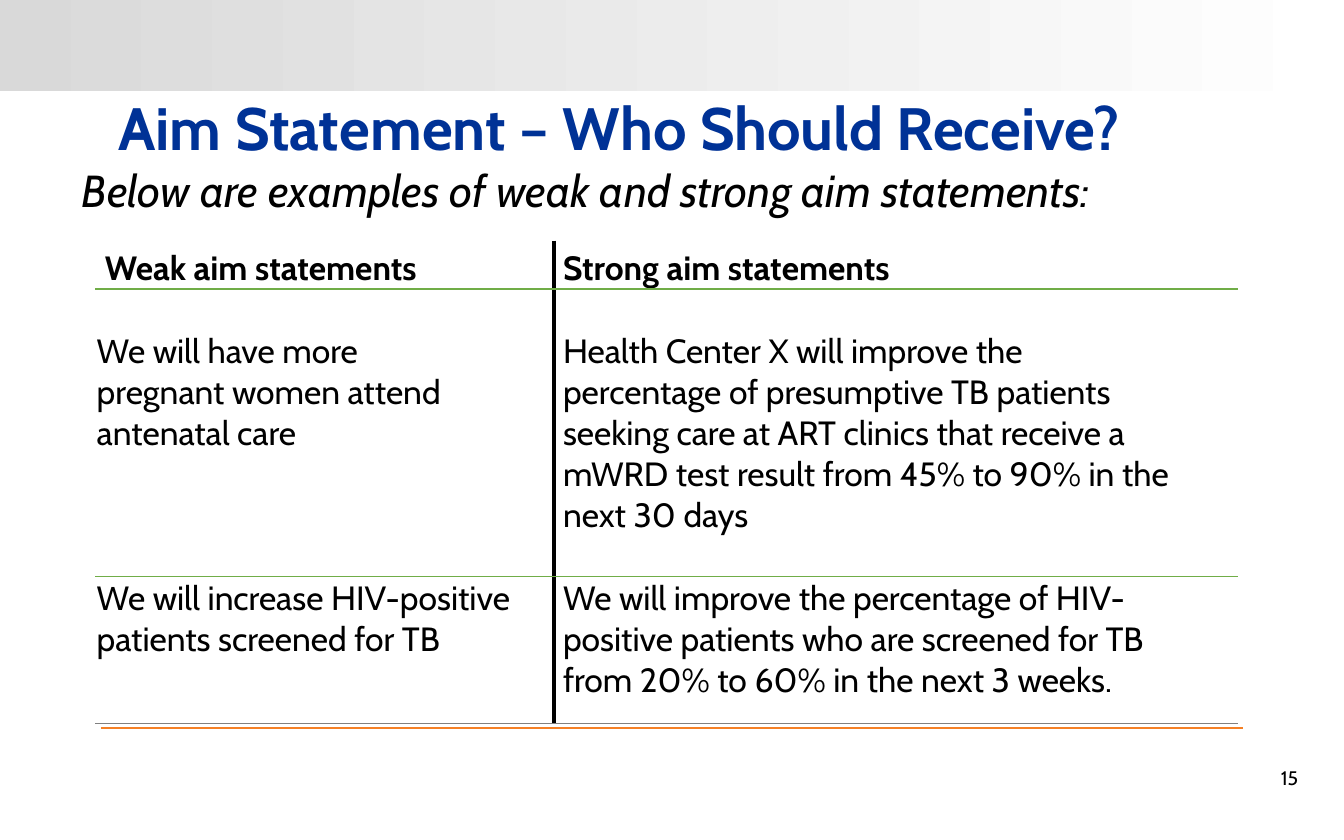
from pptx import Presentation
from pptx.dml.color import RGBColor
from pptx.enum.shapes import MSO_CONNECTOR, MSO_SHAPE
from pptx.enum.text import MSO_ANCHOR as Anchor, PP_ALIGN as Align
from pptx.oxml import parse_xml
from pptx.oxml.ns import nsdecls, qn
from pptx.util import Inches, Pt

BLACK = RGBColor(0x00, 0x00, 0x00)
WHITE = RGBColor(0xFF, 0xFF, 0xFF)
SILVER = RGBColor(0xD9, 0xD9, 0xD9)
GRAY = RGBColor(0x80, 0x80, 0x80)
BLUE = RGBColor(0x00, 0x32, 0x96)
ORANGE = RGBColor(0xF5, 0x80, 0x25)
GREEN = RGBColor(0x70, 0xAD, 0x47)

FONT = "Cabin"
NO_STYLE = "{2D5ABB26-0587-4C30-8999-92F81FD0307C}"
COLUMN_WIDTHS = (3.41, 5.09)
ROW_HEIGHTS = (0.36, 2.14, 1.09)
STATEMENTS = (
    (["Weak aim statements"], ["Strong aim statements"]),
    (
        ["We will have more pregnant women attend antenatal care"],
        [
            "Health Center X will improve the",
            "percentage of presumptive TB patients",
            "seeking care at ART clinics that receive a",
            "mWRD test result from 45% to 90% in the",
            "next 30 days",
        ],
    ),
    (
        ["We will increase HIV-positive", "patients screened for TB"],
        [
            "We will improve the percentage of HIV-",
            "positive patients who are screened for TB",
            "from 20% to 60% in the next 3 weeks.",
        ],
    ),
)


def apply(target, **values):
    for name, value in values.items():
        setattr(target, name, value)


def place(shape, left, top, width, height):
    apply(shape, left=Inches(left), top=Inches(top),
          width=Inches(width), height=Inches(height))


def write(frame, lines, size, color=BLACK, bold=False, italic=False, **para_format):
    for number, line in enumerate(lines):
        para = frame.paragraphs[0] if number == 0 else frame.add_paragraph()
        apply(para, **para_format)
        span = para.add_run()
        span.text = line
        apply(span.font, name=FONT, size=Pt(size), bold=bold, italic=italic)
        span.font.color.rgb = color


def add_header_band(page, left, top, width, height):
    band = page.shapes.add_shape(MSO_SHAPE.RECTANGLE, Inches(left), Inches(top),
                                 Inches(width), Inches(height))
    band.shadow.inherit = False
    band.line.fill.background()
    band.fill.gradient()
    band.fill.gradient_angle = 0
    for stop, color in zip(band.fill.gradient_stops, (SILVER, WHITE)):
        stop.color.rgb = color


def add_footer_rule(page, left, top, width):
    rule = page.shapes.add_connector(MSO_CONNECTOR.STRAIGHT, Inches(left), Inches(top),
                                     Inches(left + width), Inches(top))
    rule.line.color.rgb = ORANGE
    rule.line.width = Pt(1)
    rule._element.spPr.append(parse_xml(f"<a:effectLst {nsdecls('a')}/>"))


def add_title(page, text, *area):
    title = page.shapes.title
    place(title, *area)
    frame = title.text_frame
    apply(frame, margin_left=0, margin_right=0, vertical_anchor=Anchor.TOP, word_wrap=True)
    write(frame, [text], 32, BLUE, bold=True, alignment=Align.LEFT,
          line_spacing=0.85, space_after=Pt(12))


def add_text(page, text, area, size, italic=False, align=Align.LEFT, **frame_format):
    box = page.shapes.add_textbox(*map(Inches, area))
    apply(box.text_frame, word_wrap=True, **frame_format)
    write(box.text_frame, [text], size, italic=italic, alignment=align, line_spacing=0.9)


def set_borders(cell, borders):
    """Draw borders given as {side: (color, points)}, sides being L, R, T and B."""
    properties = cell._tc.get_or_add_tcPr()
    sides = [side for side in "LRTB" if side in borders]
    for position, side in enumerate(sides):
        color, points = borders[side]
        properties.insert(position, parse_xml(
            f'<a:ln{side} {nsdecls("a")} w="{Pt(points)}"><a:solidFill>'
            f'<a:srgbClr val="{color}"/></a:solidFill></a:ln{side}>'))


def add_statement_table(page, left, top):
    table = page.shapes.add_table(
        len(ROW_HEIGHTS), len(COLUMN_WIDTHS), Inches(left), Inches(top),
        Inches(sum(COLUMN_WIDTHS)), Inches(sum(ROW_HEIGHTS))).table
    apply(table, first_row=False, horz_banding=False)
    table._tbl.tblPr.find(qn("a:tableStyleId")).text = NO_STYLE
    for column, width in zip(table.columns, COLUMN_WIDTHS):
        column.width = Inches(width)
    for row, height in zip(table.rows, ROW_HEIGHTS):
        row.height = Inches(height)

    for r, row in enumerate(STATEMENTS):
        for c, lines in enumerate(row):
            cell = table.cell(r, c)
            header, strong = r == 0, c == 1
            apply(
                cell,
                margin_left=Inches(0.07 if header or strong else 0.01),
                margin_right=Inches(0.01 if header or strong else 0.2 if r == 2 else 0.6),
                margin_top=Inches(0.31 if r == 1 else 0.01),
                margin_bottom=0,
                vertical_anchor=Anchor.BOTTOM if header else Anchor.TOP,
            )
            cell.fill.background()
            write(cell.text_frame, lines, 18, bold=header)
            borders = {"L" if strong else "R": (BLACK, 2.25)}
            if header:
                borders["B"] = (GREEN, 1)
            elif r == 1:
                borders["T"] = (GREEN, 1)
            else:
                borders["B"] = (GRAY, 0.5)
            set_borders(cell, borders)


def main():
    deck = Presentation()
    apply(deck, slide_width=Inches(10), slide_height=Inches(6.25))
    page = deck.slides.add_slide(deck.slide_layouts[5])
    add_header_band(page, 0, 0, 10, 0.68)
    add_footer_rule(page, 0.75, 5.42, 8.5)
    add_text(page, "Below are examples of weak and strong aim statements:",
             (0.51, 1.21, 8.91, 0.51), 24, italic=True)
    add_statement_table(page, 0.71, 1.79)
    add_title(page, "Aim Statement – Who Should Receive?", 0.88, 0.71, 8.24, 0.51)
    add_text(page, "15", (7.41, 5.63, 2.25, 0.33), 10.5, align=Align.RIGHT,
             margin_left=0, margin_right=0, vertical_anchor=Anchor.MIDDLE)
    deck.save("out.pptx")


if __name__ == "__main__":
    main()
